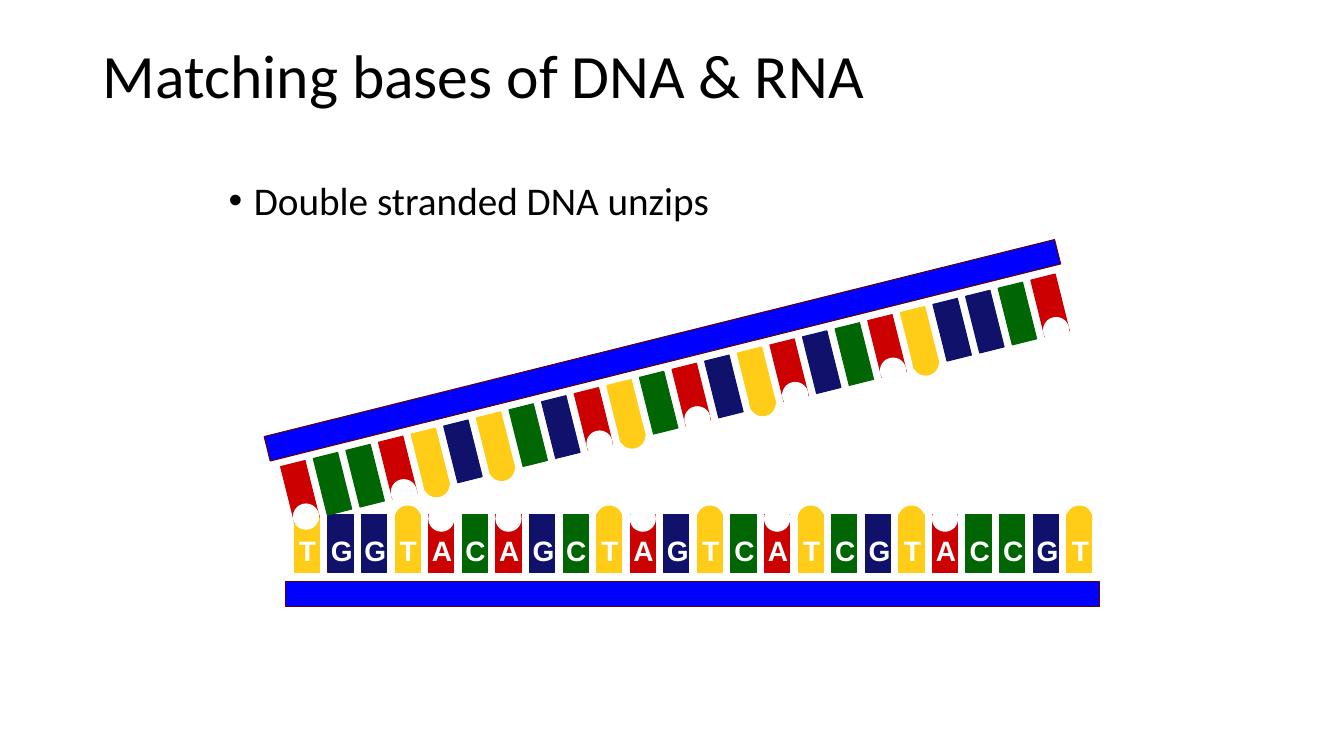
from pptx import Presentation
from pptx.dml.color import RGBColor
from pptx.enum.shapes import MSO_SHAPE
from pptx.enum.text import MSO_ANCHOR, MSO_AUTO_SIZE, PP_ALIGN
from pptx.oxml import parse_xml
from pptx.oxml.ns import nsdecls
from pptx.util import Inches, Pt

RECT, OVAL = MSO_SHAPE.RECTANGLE, MSO_SHAPE.OVAL
LEFT, CENTER = PP_ALIGN.LEFT, PP_ALIGN.CENTER
TOP, MIDDLE = MSO_ANCHOR.TOP, MSO_ANCHOR.MIDDLE
NO_FIT, GROW = MSO_AUTO_SIZE.NONE, MSO_AUTO_SIZE.SHAPE_TO_FIT_TEXT

COLORS = {
    "text": "000000", "white": "FFFFFF",
    "backbone": "0000FF", "backbone_line": "660000",
    "A": "CC0000", "T": "FFCC18", "C": "006604", "G": "0F116A",
}
TIPS = {"A": "white", "T": "T"}  # notch on A, knob on T
PAIRS = {"A": "T", "T": "A", "C": "G", "G": "C"}
LOWER = "TGGTACAGCTAGTCATCGTACCGT"
UPPER = "".join(PAIRS[base] for base in LOWER)
BASE_W, BASE_H, TIP = 0.25, 0.58, 0.25


class DnaSlide:
    def __init__(self, prs):
        self.s = prs.slides.add_slide(prs.slide_layouts[5])

    def add_text(self, tf, text, size, font="Calibri", color="text", align=LEFT,
                 bold=False):
        p = tf.paragraphs[0]
        p.alignment = align
        r = p.add_run()
        r.text = text
        r.font.name, r.font.size, r.font.bold = font, Pt(size), bold
        r.font.color.rgb = RGBColor.from_string(COLORS[color])
        return p

    def title(self, text, x, y, w, h):
        sp = self.s.shapes.title
        sp.left, sp.top = Inches(x), Inches(y)
        sp.width, sp.height = Inches(w), Inches(h)
        tf = sp.text_frame
        tf.word_wrap, tf.auto_size = True, NO_FIT
        tf.vertical_anchor = TOP
        self.add_text(tf, text, 44).line_spacing = 0.9

    def bullet(self, text, x, y, w, h):
        sp = self.s.shapes.add_textbox(Inches(x), Inches(y), Inches(w), Inches(h))
        tf = sp.text_frame
        tf.word_wrap = True
        p = self.add_text(tf, text, 28)
        p.line_spacing, p.space_before = 0.9, Pt(10)
        pPr = p._p.get_or_add_pPr()
        pPr.set("marL", str(Inches(0.25)))
        pPr.set("indent", str(Inches(-0.25)))
        pPr.append(parse_xml(f'<a:buFont {nsdecls("a")} typeface="Arial"/>'))
        pPr.append(parse_xml(f'<a:buChar {nsdecls("a")} char="•"/>'))

    def shape(self, kind, x, y, w, h, fill, line=None, angle=0, shapes=None):
        shapes = self.s.shapes if shapes is None else shapes
        sp = shapes.add_shape(kind, Inches(x), Inches(y), Inches(w), Inches(h))
        sp.shadow.inherit = False
        sp.rotation = angle
        sp.fill.solid()
        sp.fill.fore_color.rgb = RGBColor.from_string(COLORS[fill])
        sp.line.color.rgb = RGBColor.from_string(COLORS[line or fill])
        sp.line.width = Pt(0.75)

    def backbone(self, x, y, angle=0):
        self.shape(RECT, x, y, 8.08, 0.25, "backbone", "backbone_line", angle)

    def base(self, letter, x, y, tip_dx, tip_dy, angle):
        tip = TIPS.get(letter)
        shapes = self.s.shapes.add_group_shape().shapes if tip else None
        self.shape(RECT, x, y, BASE_W, BASE_H, letter, None, angle, shapes)
        if tip:
            self.shape(OVAL, x + tip_dx, y + tip_dy, TIP, TIP, tip, None, angle,
                       shapes)

    def strand(self, bases, start, end, tip_offset, angle=0):
        (x0, y0), (x1, y1) = start, end
        for i, letter in enumerate(bases):
            t = i / (len(bases) - 1)
            self.base(letter, x0 + (x1 - x0) * t, y0 + (y1 - y0) * t,
                      *tip_offset, angle)

    def label(self, letter, center, y):
        w = 0.4
        sp = self.s.shapes.add_textbox(Inches(center - w / 2), Inches(y),
                                       Inches(w), Inches(0.43))
        tf = sp.text_frame
        tf.word_wrap, tf.auto_size = False, GROW
        tf.vertical_anchor = MIDDLE
        self.add_text(tf, letter, 20, "Arial", "white", CENTER, True)


def main():
    prs = Presentation()
    prs.slide_width, prs.slide_height = Inches(13.33), Inches(7.5)
    s = DnaSlide(prs)

    # Heading and statement
    s.title("Matching bases of DNA & RNA", 0.92, 0.4, 11.5, 1.45)
    s.bullet("Double stranded DNA unzips", 2.17, 1.75, 8.91, 2.39)

    # Lower strand with lettered bases
    s.backbone(2.83, 5.77)
    s.strand(LOWER, (2.92, 5.1), (10.58, 5.1), (0, -0.08))
    for i, letter in enumerate(LOWER):
        s.label(letter, 3.05 + i / 3, 5.24)

    # Upper strand, complementary and swung open
    s.strand(UPPER, (2.85, 4.59), (10.29, 2.74), (0.06, 0.41), 346)
    s.backbone(2.53, 3.35, 346)

    prs.save("out.pptx")


if __name__ == "__main__":
    main()
